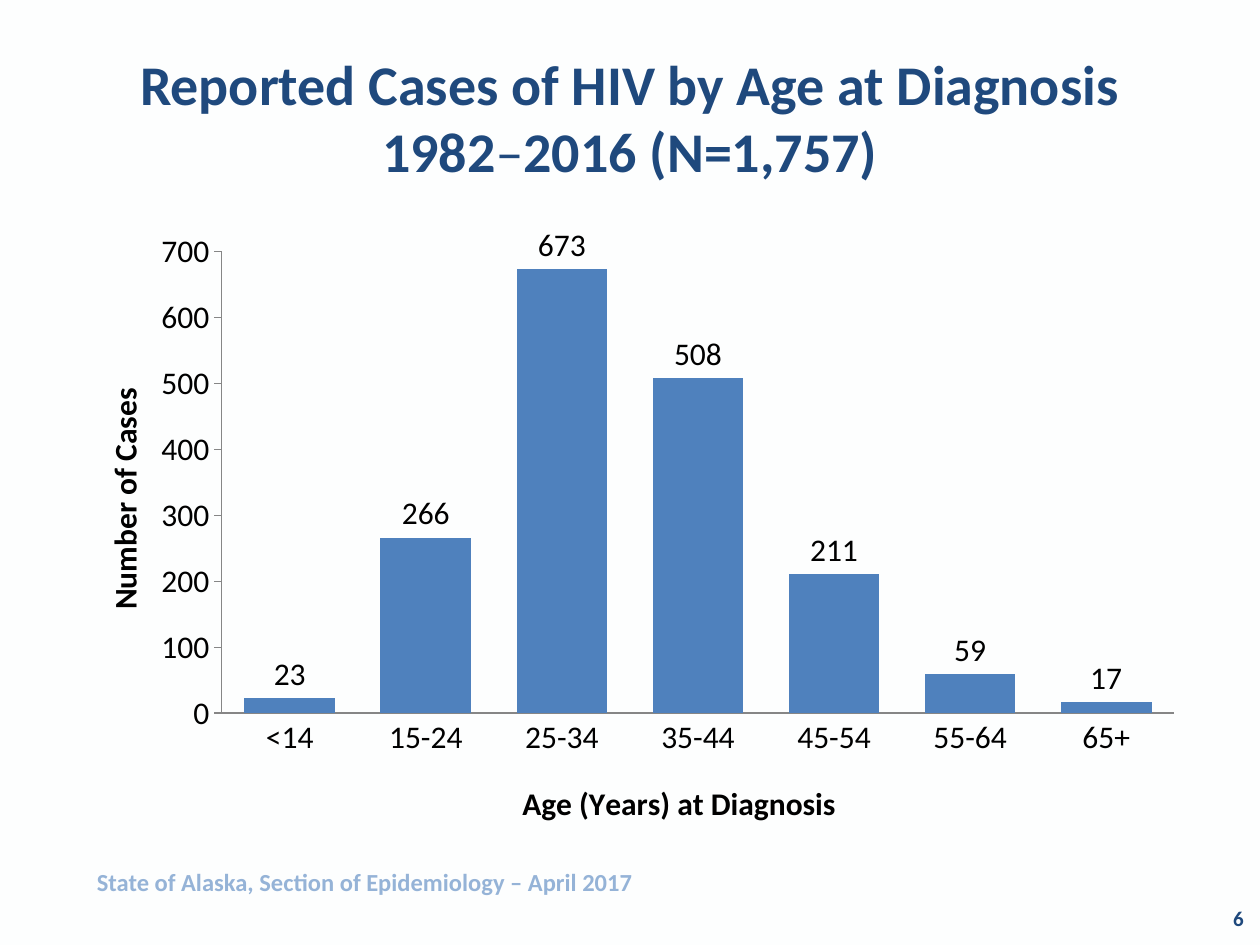
from lxml import etree
from pptx import Presentation
from pptx.chart.data import CategoryChartData
from pptx.dml.color import RGBColor
from pptx.enum.chart import XL_CHART_TYPE, XL_LABEL_POSITION, XL_TICK_MARK
from pptx.enum.text import MSO_ANCHOR, PP_ALIGN
from pptx.oxml.ns import qn
from pptx.util import Inches, Pt

FONT = "Calibri"
BACKGROUND = RGBColor(0xFD, 0xFE, 0xFE)
NAVY = RGBColor(0x1F, 0x49, 0x7D)
PALE_BLUE = RGBColor(0x95, 0xB3, 0xD7)
BAR_BLUE = RGBColor(0x4F, 0x81, 0xBD)
AXIS_GRAY = RGBColor(0x86, 0x86, 0x86)
BLACK = RGBColor(0, 0, 0)

COLUMN = XL_CHART_TYPE.COLUMN_CLUSTERED
OUTSIDE_END = XL_LABEL_POSITION.OUTSIDE_END
TICK_NONE, TICK_OUT = XL_TICK_MARK.NONE, XL_TICK_MARK.OUTSIDE
LEFT, CENTER, RIGHT = PP_ALIGN.LEFT, PP_ALIGN.CENTER, PP_ALIGN.RIGHT
TOP, MIDDLE = MSO_ANCHOR.TOP, MSO_ANCHOR.MIDDLE

CASES_BY_AGE = {
    "<14": 23, "15-24": 266, "25-34": 673, "35-44": 508,
    "45-54": 211, "55-64": 59, "65+": 17,
}


def set_font(font, size, color, bold):
    font.name = FONT
    font.size = Pt(size)
    font.bold = bold
    font.color.rgb = color


def add_run(paragraph, text, size, color, bold=True):
    run = paragraph.add_run()
    run.text = text
    set_font(run.font, size, color, bold)


def add_text(slide, box, text, size, color, align=LEFT, anchor=TOP):
    """Add a bold text box and return its paragraph for further runs."""
    shape = slide.shapes.add_textbox(*map(Inches, box))
    frame = shape.text_frame
    frame.word_wrap = True
    frame.vertical_anchor = anchor
    paragraph = frame.paragraphs[0]
    paragraph.alignment = align
    add_run(paragraph, text, size, color)
    return paragraph


def add_title(slide, box):
    paragraph = add_text(slide, box, "Reported Cases of HIV by Age at Diagnosis",
                         32, NAVY, CENTER, MIDDLE)
    paragraph.add_line_break()
    add_run(paragraph, "1982", 32, NAVY)
    add_run(paragraph, "–", 32, NAVY, bold=False)
    add_run(paragraph, "2016 (N=1,757)", 32, NAVY)


def set_layout(element, index, **fractions):
    """Fix a chart part at fractions of the chart's width and height."""
    for old_layout in element.findall(qn("c:layout")):
        element.remove(old_layout)
    layout = etree.Element(qn("c:layout"))
    manual = etree.SubElement(layout, qn("c:manualLayout"))
    if "w" in fractions:
        etree.SubElement(manual, qn("c:layoutTarget"), val="inner")
    for mode in ("xMode", "yMode"):
        etree.SubElement(manual, qn(f"c:{mode}"), val="edge")
    for name, value in fractions.items():
        etree.SubElement(manual, qn(f"c:{name}"), val=str(value))
    element.insert(index, layout)


def format_axis(axis, title, tick_mark, title_x, title_y):
    axis.has_major_gridlines = False
    axis.major_tick_mark = tick_mark
    axis.minor_tick_mark = TICK_NONE
    axis.format.line.color.rgb = AXIS_GRAY
    axis.format.line.width = Pt(0.75)
    add_run(axis.axis_title.text_frame.paragraphs[0], title, 18, BLACK)
    set_layout(axis.axis_title._element, 1, x=title_x, y=title_y)


def add_age_chart(slide, box):
    data = CategoryChartData()
    data.categories = list(CASES_BY_AGE)
    data.add_series("Series 1", list(CASES_BY_AGE.values()))
    chart = slide.shapes.add_chart(COLUMN, *map(Inches, box), data).chart
    chart.has_legend = False
    chart.has_title = False
    set_font(chart.font, 18, BLACK, False)

    plot = chart.plots[0]
    plot.gap_width = 50
    plot.vary_by_categories = False
    plot.has_data_labels = True
    plot.data_labels.show_value = True
    plot.data_labels.position = OUTSIDE_END
    fill = plot.series[0].format.fill
    fill.solid()
    fill.fore_color.rgb = BAR_BLUE

    format_axis(chart.category_axis, "Age (Years) at Diagnosis", TICK_NONE, 0.4, 0.89)
    format_axis(chart.value_axis, "Number of Cases", TICK_OUT, 0.03, 0.26)
    chart.value_axis.minimum_scale = 0
    chart.value_axis.maximum_scale = 700
    chart.value_axis.major_unit = 100
    plot_area = chart._chartSpace.find(f".//{qn('c:plotArea')}")
    set_layout(plot_area, 0, x=0.14, y=0.05, w=0.84, h=0.74)


def main():
    presentation = Presentation()
    presentation.slide_width = Inches(10)
    presentation.slide_height = Inches(7.5)
    slide = presentation.slides.add_slide(presentation.slide_layouts[6])
    background = slide.background.fill
    background.solid()
    background.fore_color.rgb = BACKGROUND

    add_title(slide, (0.5, 0.3, 9, 1.25))
    add_text(slide, (7.64, 7.09, 2.33, 0.4), "6", 12, NAVY, RIGHT, MIDDLE)
    add_text(slide, (0.67, 6.83, 7, 0.34),
             "State of Alaska, Section of Epidemiology – April 2017", 14, PALE_BLUE)
    add_age_chart(slide, (0.5, 1.75, 9, 4.95))
    presentation.save("out.pptx")


if __name__ == "__main__":
    main()
